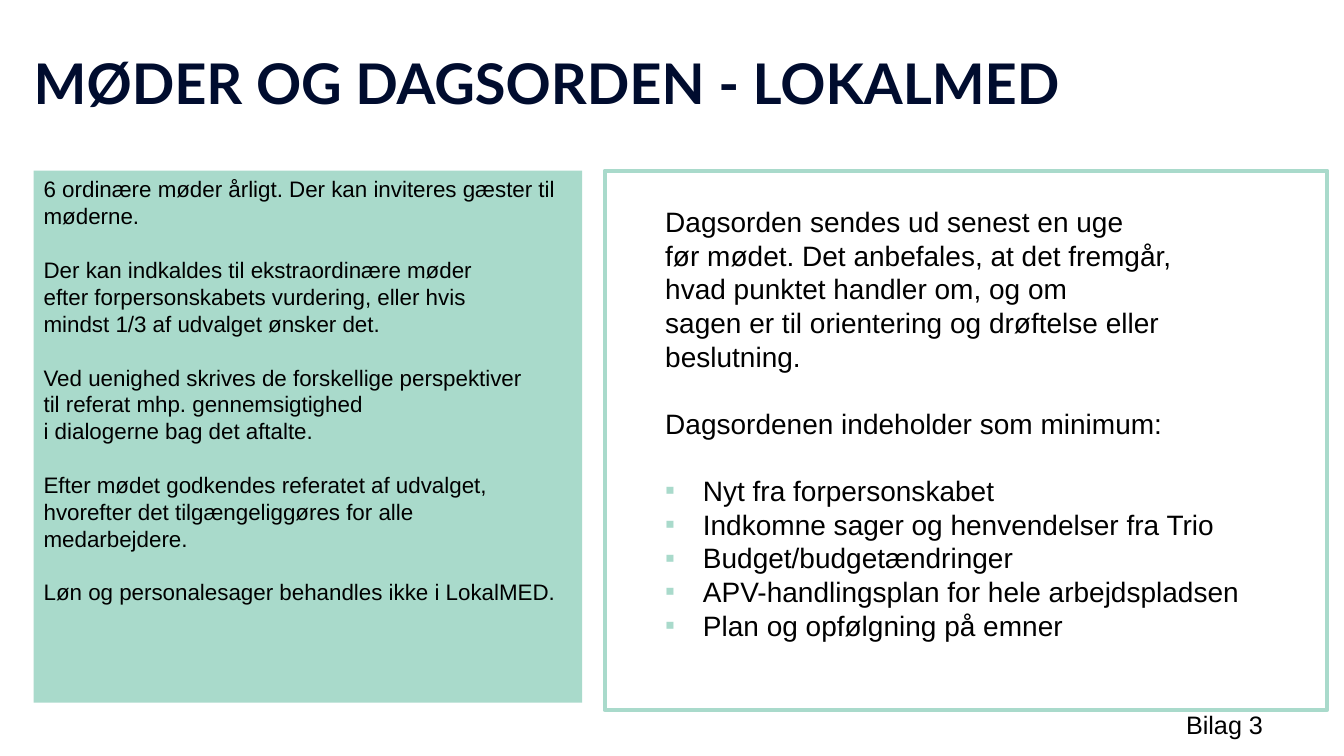
"""Build the slide on meetings and agendas in LokalMED."""
from lxml.etree import SubElement
from pptx import Presentation
from pptx.dml.color import RGBColor
from pptx.enum.shapes import MSO_SHAPE
from pptx.enum.text import MSO_ANCHOR, MSO_AUTO_SIZE, PP_ALIGN
from pptx.oxml.ns import qn
from pptx.util import Cm, Pt

COLORS = {"navy": "000C2E", "mint": "A9DACB", "black": "000000"}
LINE_RATIO = 1.2

TITLE = "MØDER OG DAGSORDEN - LOKALMED"
MEETING_RULES = [
    "6 ordinære møder årligt. Der kan inviteres gæster til møderne.",
    "Der kan indkaldes til ekstraordinære møder\v"
    "efter forpersonskabets vurdering, eller hvis\v"
    "mindst 1/3 af udvalget ønsker det.",
    "Ved uenighed skrives de forskellige perspektiver\v"
    "til referat mhp. gennemsigtighed\v"
    "i dialogerne bag det aftalte.",
    "Efter mødet godkendes referatet af udvalget,\v"
    "hvorefter det tilgængeliggøres for alle\v"
    "medarbejdere.",
    "Løn og personalesager behandles ikke i LokalMED.",
]
AGENDA_INTRO = [
    "Dagsorden sendes ud senest en uge\v"
    "før mødet. Det anbefales, at det fremgår,\v"
    "hvad punktet handler om, og om\v"
    "sagen er til orientering og drøftelse eller\v"
    "beslutning.",
    "Dagsordenen indeholder som minimum:",
]
AGENDA_ITEMS = [
    "Nyt fra forpersonskabet",
    "Indkomne sager og henvendelser fra Trio",
    "Budget/budgetændringer",
    "APV-handlingsplan for hele arbejdspladsen",
    "Plan og opfølgning på emner",
]


def color(name):
    """Return the named colour."""
    return RGBColor.from_string(COLORS[name])


def assign(target, values):
    """Set each attribute of target from a dict."""
    for key, value in values.items():
        setattr(target, key, value)


def place(part, left, top, width, height):
    """Move and size a part, in centimetres."""
    assign(part, {"left": Cm(left), "top": Cm(top),
                  "width": Cm(width), "height": Cm(height)})


def style_runs(paragraph, size, name="Arial", ink="black", bold=False):
    """Format all runs of a paragraph."""
    for run in paragraph.runs:
        assign(run.font, {"size": Pt(size), "name": name, "bold": bold})
        run.font.color.rgb = color(ink)


def set_bullet(paragraph, bulleted):
    """Give a paragraph a mint square bullet, or none."""
    properties = paragraph._p.get_or_add_pPr()
    indent = Cm(0.95) if bulleted else 0
    properties.set("marL", str(indent))
    properties.set("indent", str(-indent))
    if bulleted:
        bullet_color = SubElement(properties, qn("a:buClr"))
        SubElement(bullet_color, qn("a:srgbClr"), val=COLORS["mint"])
        SubElement(properties, qn("a:buFont"), typeface="Arial")
        SubElement(properties, qn("a:buChar"), char="▪")
    else:
        SubElement(properties, qn("a:buNone"))


def write_text(frame, blocks, size, items=()):
    """Write blocks one line apart, followed by a bulleted list."""
    assign(frame, {"word_wrap": True, "auto_size": MSO_AUTO_SIZE.NONE,
                   "vertical_anchor": MSO_ANCHOR.TOP})
    frame.text = "\n".join([*blocks, *items])
    line = Pt(size * LINE_RATIO)
    for index, paragraph in enumerate(frame.paragraphs):
        opens_block = 0 < index <= len(blocks)
        assign(paragraph, {"alignment": PP_ALIGN.LEFT, "line_spacing": line,
                           "space_before": line if opens_block else Pt(0),
                           "space_after": Pt(0)})
        set_bullet(paragraph, index >= len(blocks))
        style_runs(paragraph, size)


def write_title(title):
    """Place and format the slide title."""
    place(title, 0.85, 1.47, 31.67, 1.45)
    frame = title.text_frame
    frame.text = TITLE
    assign(frame, {"margin_left": 0, "margin_right": 0, "margin_top": 0,
                   "margin_bottom": 0, "vertical_anchor": MSO_ANCHOR.BOTTOM,
                   "auto_size": MSO_AUTO_SIZE.NONE})
    heading = frame.paragraphs[0]
    assign(heading, {"alignment": PP_ALIGN.LEFT, "line_spacing": 0.83})
    style_runs(heading, 40, "Lato", "navy", True)


def add_panel(slide, left, top, width, height, filled):
    """Add a mint rectangle, either filled or as a frame."""
    panel = slide.shapes.add_shape(MSO_SHAPE.RECTANGLE, Cm(left), Cm(top),
                                   Cm(width), Cm(height))
    panel.shadow.inherit = False
    if filled:
        panel.fill.solid()
        panel.fill.fore_color.rgb = color("mint")
        panel.line.fill.background()
    else:
        panel.fill.background()
        panel.line.color.rgb = color("mint")
        panel.line.width = Pt(3)
    return panel


def main():
    """Build and save the slide."""
    deck = Presentation()
    assign(deck, {"slide_width": Cm(33.87), "slide_height": Cm(19.05)})
    slide = deck.slides.add_slide(deck.slide_layouts[1])
    write_title(slide.shapes.title)

    agenda = slide.placeholders[1]
    place(agenda, 16.51, 5.03, 16.5, 11.38)
    write_text(agenda.text_frame, AGENDA_INTRO, 20, AGENDA_ITEMS)
    first_item = agenda.text_frame.paragraphs[len(AGENDA_INTRO)]
    first_item.space_before = Pt(20 * LINE_RATIO)

    meetings = add_panel(slide, 0.85, 4.3, 13.82, 13.41, True)
    write_text(meetings.text_frame, MEETING_RULES, 16)
    add_panel(slide, 15.24, 4.3, 18.21, 13.59, False)

    appendix = slide.shapes.add_textbox(Cm(29.64), Cm(17.75), Cm(4), Cm(1.02))
    write_text(appendix.text_frame, ["Bilag 3"], 18)
    deck.save("out.pptx")


if __name__ == "__main__":
    main()
